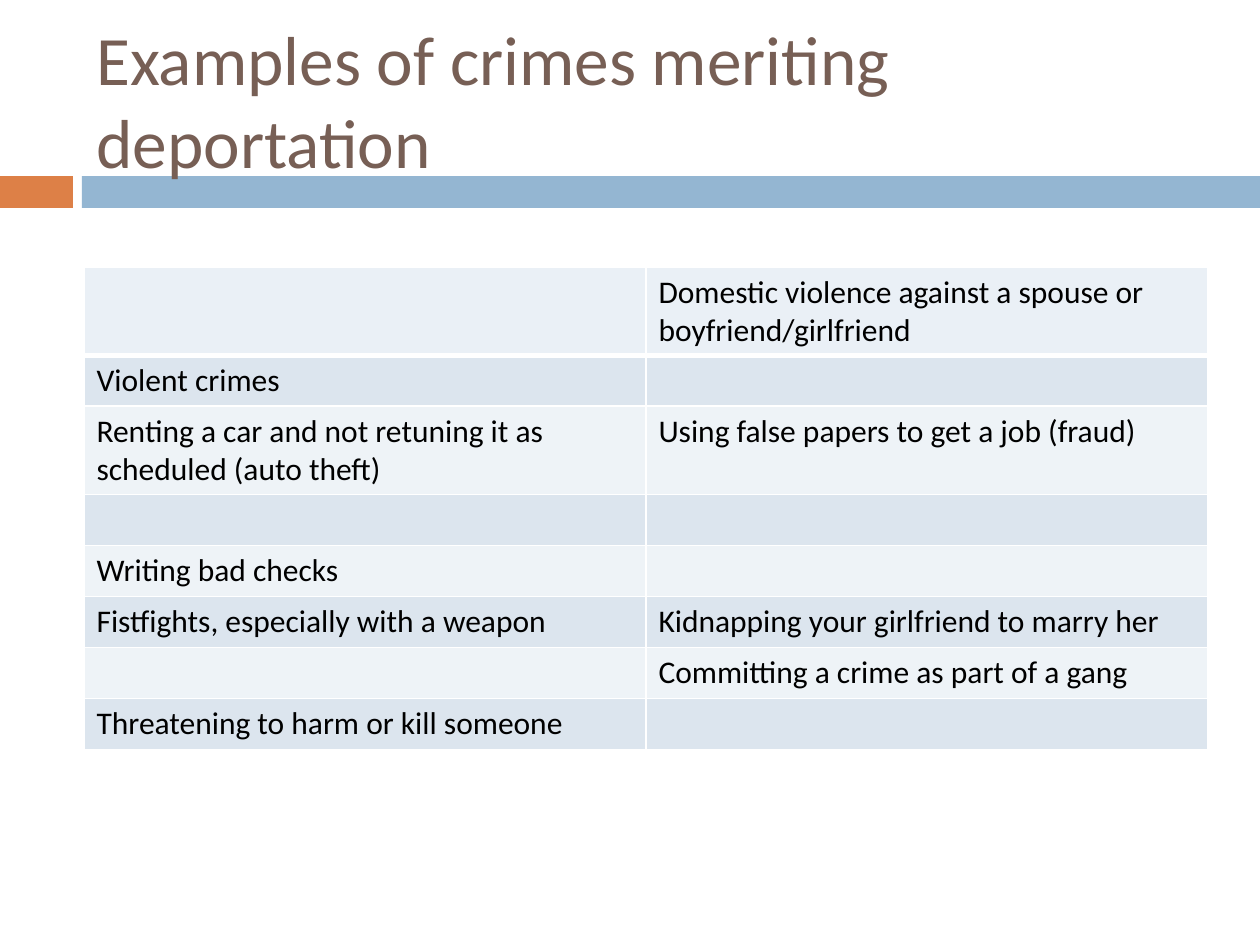
from dataclasses import dataclass

from lxml.etree import SubElement
from pptx import Presentation
from pptx.dml.color import RGBColor
from pptx.enum.shapes import MSO_SHAPE
from pptx.enum.text import MSO_ANCHOR
from pptx.oxml.ns import qn
from pptx.slide import Slide
from pptx.table import _Cell
from pptx.text.text import TextFrame
from pptx.util import Emu, Pt

PX = 914400 // 126


@dataclass(frozen=True)
class Theme:
    font: str = "Calibri"
    title_size: float = 39.6
    body_size: float = 18
    title: str = "775F55"
    text: str = "000000"
    accent: str = "DD8047"
    bar: str = "94B6D2"
    header: str = "EAF0F6"
    bands: tuple[str, str] = ("DCE5EE", "EEF3F7")
    border: str = "FFFFFF"
    border_width: int = 1
    header_rule: int = 3


@dataclass(frozen=True)
class Box:
    left: int
    top: int
    width: int
    height: int

    def emu(self) -> tuple[Emu, ...]:
        return tuple(Emu(v * PX) for v in (self.left, self.top, self.width, self.height))


@dataclass(frozen=True)
class Bar:
    box: Box
    color: str


THEME = Theme()
SLIDE = Box(0, 0, 1260, 945)
TITLE_BOX = Box(84, 31, 1124, 136)
ROW_HEIGHT = 51
BARS = (
    Bar(Box(0, 176, 73, 32), THEME.accent),
    Bar(Box(82, 176, 1178, 32), THEME.bar),
)
TITLE = "Examples of crimes meriting deportation"
CRIMES = (
    ("", "Domestic violence against a spouse or boyfriend/girlfriend"),
    ("Violent crimes", ""),
    ("Renting a car and not retuning it as scheduled (auto theft)",
     "Using false papers to get a job (fraud)"),
    ("", ""),
    ("Writing bad checks", ""),
    ("Fistfights, especially with a weapon", "Kidnapping your girlfriend to marry her"),
    ("", "Committing a crime as part of a gang"),
    ("Threatening to harm or kill someone", ""),
)
TABLE_BOX = Box(84, 267, 1124, ROW_HEIGHT * len(CRIMES))


def set_text(tf: TextFrame, text: str, size: float, color: str) -> None:
    tf.text = text
    for r in tf.paragraphs[0].runs:
        r.font.name = THEME.font
        r.font.size = Pt(size)
        r.font.color.rgb = RGBColor.from_string(color)


def add_bar(s: Slide, bar: Bar) -> None:
    sp = s.shapes.add_shape(MSO_SHAPE.RECTANGLE, *bar.box.emu())
    sp.shadow.inherit = False
    sp.fill.solid()
    sp.fill.fore_color.rgb = RGBColor.from_string(bar.color)
    sp.line.fill.background()


def add_title(s: Slide) -> None:
    tf = s.shapes.add_textbox(*TITLE_BOX.emu()).text_frame
    tf.word_wrap = True
    tf.vertical_anchor = MSO_ANCHOR.MIDDLE
    set_text(tf, TITLE, THEME.title_size, THEME.title)


def set_borders(cell: _Cell, top: int, bottom: int) -> None:
    """Draw the four cell edges; widths are in points."""
    tc_pr = cell._tc.get_or_add_tcPr()
    side = THEME.border_width
    for tag, width in (("a:lnL", side), ("a:lnR", side), ("a:lnT", top), ("a:lnB", bottom)):
        ln = SubElement(tc_pr, qn(tag), w=str(Pt(width)))
        SubElement(SubElement(ln, qn("a:solidFill")), qn("a:srgbClr"), val=THEME.border)


def add_crime_table(s: Slide) -> None:
    table = s.shapes.add_table(len(CRIMES), len(CRIMES[0]), *TABLE_BOX.emu()).table
    for i, crimes in enumerate(CRIMES):
        table.rows[i].height = Emu(ROW_HEIGHT * PX)
        color = THEME.bands[(i - 1) % 2] if i else THEME.header
        top = THEME.header_rule if i == 1 else THEME.border_width
        bottom = THEME.header_rule if i == 0 else THEME.border_width
        for j, crime in enumerate(crimes):
            cell = table.cell(i, j)
            set_borders(cell, top, bottom)
            cell.fill.solid()
            cell.fill.fore_color.rgb = RGBColor.from_string(color)
            set_text(cell.text_frame, crime, THEME.body_size, THEME.text)
            for r in cell.text_frame.paragraphs[0].runs:
                r.font.bold = False


def main() -> None:
    prs = Presentation()
    prs.slide_width, prs.slide_height = SLIDE.emu()[2:]
    s = prs.slides.add_slide(prs.slide_layouts[6])
    for bar in BARS:
        add_bar(s, bar)
    add_title(s)
    add_crime_table(s)
    prs.save("out.pptx")


if __name__ == "__main__":
    main()
